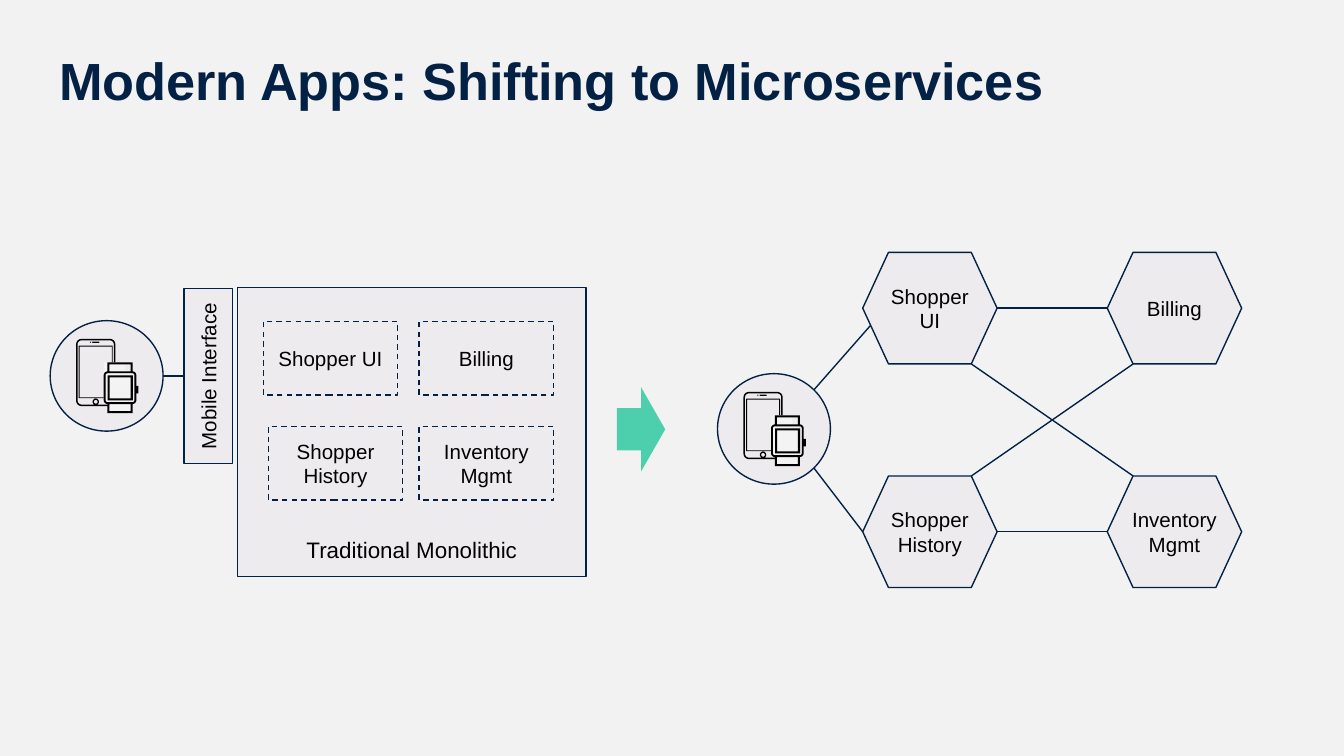
import math
from dataclasses import dataclass, field
from typing import Any, NamedTuple

from lxml import etree
from pptx import Presentation
from pptx.dml.color import RGBColor
from pptx.enum import dml, shapes as kinds, text
from pptx.oxml import ns
from pptx.util import Pt


@dataclass(frozen=True)
class Theme:
    font: str = "Arial"
    paper: RGBColor = RGBColor.from_string("F2F2F2")
    panel: RGBColor = RGBColor.from_string("EEEBEE")
    navy: RGBColor = RGBColor.from_string("022144")
    black: RGBColor = RGBColor.from_string("000000")
    mint: RGBColor = RGBColor.from_string("4DCFAD")
    strap: RGBColor = RGBColor.from_string("F3F3F3")
    title_size: float = 28
    caption_size: float = 12
    label_size: float = 11
    line_width: float = 0.75


THEME = Theme()
KIND = kinds.MSO_SHAPE


class Box(NamedTuple):
    left: float
    top: float
    width: float
    height: float

    def moved(self, x: float, y: float) -> "Box":
        return self._replace(left=self.left + x, top=self.top + y)

    def inset(self, gap: float) -> "Box":
        return Box(self.left + gap, self.top + gap,
                   self.width - 2 * gap, self.height - 2 * gap)


class Ring(NamedTuple):
    box: Box
    radius: float = 0


class Link(NamedTuple):
    x1: float
    y1: float
    x2: float
    y2: float


@dataclass(frozen=True)
class Block:
    label: str
    box: Box
    kind: Any = KIND.RECTANGLE
    fill: RGBColor = THEME.panel
    outlined: bool = True
    dashed: bool = False
    size: float = THEME.label_size
    margin: float = 7.2
    anchor: Any = text.MSO_ANCHOR.MIDDLE
    rotation: float = 0
    adjustments: list[float] = field(default_factory=list)


def set_values(target: Any, values: dict[str, Any]) -> None:
    for name, value in values.items():
        setattr(target, name, value)


def write(frame: Any, label: str, size: float, color: RGBColor, bold: bool,
          align: Any, anchor: Any, margin: float) -> None:
    sides = ("left", "top", "right", "bottom")
    set_values(frame, {f"margin_{side}": Pt(margin) for side in sides}
               | {"word_wrap": True, "vertical_anchor": anchor,
                  "auto_size": text.MSO_AUTO_SIZE.NONE, "text": label})
    for para in frame.paragraphs:
        para.alignment = align
        set_values(para.font, {"name": THEME.font, "size": Pt(size), "bold": bold})
        para.font.color.rgb = color


def draw_block(page: Any, block: Block) -> Any:
    shape = page.shapes.add_shape(block.kind, *map(Pt, block.box))
    shape.shadow.inherit = False
    shape.rotation = block.rotation
    for index, value in enumerate(block.adjustments):
        shape.adjustments[index] = value
    shape.fill.solid()
    shape.fill.fore_color.rgb = block.fill
    if block.outlined:
        shape.line.color.rgb = THEME.navy
        shape.line.width = Pt(THEME.line_width)
    else:
        shape.line.fill.background()
    if block.dashed:
        shape.line.dash_style = dml.MSO_LINE.DASH
    if block.label:
        write(shape.text_frame, block.label, block.size, THEME.black, False,
              text.PP_ALIGN.CENTER, block.anchor, block.margin)
    return shape


def draw_link(page: Any, link: Link) -> Any:
    line = page.shapes.add_connector(kinds.MSO_CONNECTOR.STRAIGHT, *map(Pt, link))
    line.line.color.rgb = THEME.navy
    line.line.width = Pt(THEME.line_width)
    etree.SubElement(line._element.spPr, ns.qn("a:effectLst"))
    return line


def ring_points(ring: Ring) -> list[tuple[int, int]]:
    """Trace a rectangle clockwise, with each corner rounded in 15 degree steps."""
    box, radius = ring
    inner = box.inset(radius)
    right, bottom = inner.left + inner.width, inner.top + inner.height
    corners = ((inner.left, inner.top), (right, inner.top),
               (right, bottom), (inner.left, bottom))
    return [(Pt(x + radius * math.cos(math.radians(angle))),
             Pt(y + radius * math.sin(math.radians(angle))))
            for quarter, (x, y) in enumerate(corners)
            for angle in range(180 + 90 * quarter, 271 + 90 * quarter,
                               15 if radius else 91)]


def draw_rings(page: Any, rings: list[Ring], x: float, y: float) -> Any:
    """Join rings in one outline, where a ring inside another is a hole."""
    traces = [ring_points(Ring(ring.box.moved(x, y), ring.radius)) for ring in rings]
    builder = page.shapes.build_freeform(*traces[0][0], 1.0)
    for index, trace in enumerate(traces):
        if index:
            builder.move_to(*trace[0])
        builder.add_line_segments(trace[1:], close=True)
    shape = builder.convert_to_shape()
    shape.shadow.inherit = False
    shape.fill.solid()
    shape.fill.fore_color.rgb = THEME.black
    shape.line.fill.background()
    return shape


def hollow(box: Box, radius: float, wall: float) -> list[Ring]:
    return [Ring(box, radius), Ring(box.inset(wall), max(radius - wall, 0))]


PHONE = [*hollow(Box(0, 0, 21, 36), 2.9, 0.8),
         *hollow(Box(1.4, 3.6, 18.2, 28.2), 0.3, 0.5),
         *hollow(Box(8.8, 32, 3.4, 3.4), 1.7, 0.7),
         Ring(Box(8.6, 1.5, 3.9, 0.6), 0.3), Ring(Box(7.4, 1.5, 0.6, 0.6), 0.3)]
WATCH_CASE = [*hollow(Box(0, 4.8, 17.5, 17.5), 2.1, 1),
              Ring(Box(2, 0, 13.5, 4.8)), Ring(Box(3.1, 1, 11.3, 3.8)),
              Ring(Box(2, 22.3, 13.5, 4.8)), Ring(Box(3.1, 22.3, 11.3, 3.8)),
              Ring(Box(17.5, 12.6, 1.1, 4))]
WATCH_FACE = hollow(Box(2.1, 6.9, 13.4, 13.4), 0, 1.1)
STRAPS = [Box(2.9, 4.8, 11.5, 21.6), Box(0, 0, 11.5, 21.6)]


def draw_devices(page: Any, circle: Box) -> None:
    """Draw a circle that holds a phone with a watch in front."""
    draw_block(page, Block("", circle, KIND.OVAL))
    x, y = circle.left + 13.9, circle.top + 9.8
    watch_x, watch_y = x + 14.8, y + 12.6
    parts = [draw_rings(page, PHONE, x, y)]
    parts += [draw_block(page, Block("", strap.moved(watch_x, watch_y),
                                     fill=THEME.strap, outlined=False))
              for strap in STRAPS]
    parts += [draw_rings(page, rings, watch_x, watch_y)
              for rings in (WATCH_CASE, WATCH_FACE)]
    page.shapes.add_group_shape(parts)


def draw_monolith(page: Any) -> None:
    draw_block(page, Block("Traditional Monolithic", Box(127.4, 154.1, 186.5, 154.8),
                           size=THEME.caption_size, anchor=text.MSO_ANCHOR.BOTTOM))
    for label, x, y in (("Shopper UI", 141.1, 172.1), ("Shopper History", 143.8, 228.4),
                        ("Billing", 224.6, 172.1), ("Inventory\nMgmt", 224.6, 228.4)):
        draw_block(page, Block(label, Box(x, y, 72, 39.6), dashed=True))
    draw_devices(page, Box(26.9, 171.8, 60.5, 59.2))
    interface = draw_block(page, Block("Mobile Interface", Box(64.8, 188.5, 93.6, 26),
                                       rotation=270))
    line = draw_link(page, Link(87.4, 201.5, 98.6, 201.5))
    line.end_connect(interface, 0)  # the top side faces left once turned
    set_values(line, {"end_x": Pt(98.6), "end_y": Pt(201.5)})


def draw_microservices(page: Any) -> None:
    west, east, north, south = 462.2, 593.2, 135.2, 255
    width, height, slant = 72, 59.8, 0.231
    corner = slant * height
    upper, lower = north + height / 2, south + height / 2
    inner_west, inner_east = west + width - corner, east + corner
    circle = Box(384.4, 200.2, 60.5, 59.2)
    rim = circle.left + circle.width * (1 + math.sqrt(0.5)) / 2
    rim_drop = circle.height * (1 - math.sqrt(0.5)) / 2

    def draw_service(label: str, x: float, y: float) -> None:
        draw_block(page, Block(label, Box(x, y, width, height), KIND.HEXAGON,
                               margin=0, adjustments=[slant]))

    draw_devices(page, circle)
    draw_service("Billing", east, north)
    draw_service("Shopper History", west, south)
    draw_service("Inventory\nMgmt", east, south)
    for link in (Link(509.8, upper, east, upper),
                 Link(west + width, lower, east, lower),
                 Link(inner_west, north + height, inner_east, south),
                 Link(inner_west, south, inner_east, north + height),
                 Link(474.5, upper, rim, circle.top + rim_drop),
                 Link(west, lower, rim, circle.top + circle.height - rim_drop)):
        draw_link(page, link)
    draw_service("Shopper UI", west, north)


def main() -> None:
    deck = Presentation()
    set_values(deck, {"slide_width": Pt(720), "slide_height": Pt(405)})
    page = deck.slides.add_slide(deck.slide_layouts[5])
    page.background.fill.solid()
    page.background.fill.fore_color.rgb = THEME.paper
    title = page.shapes.title
    set_values(title, {"left": Pt(24.5), "top": Pt(18.7),
                       "width": Pt(671), "height": Pt(45.4)})
    write(title.text_frame, "Modern Apps: Shifting to Microservices", THEME.title_size,
          THEME.navy, True, text.PP_ALIGN.LEFT, text.MSO_ANCHOR.TOP, 7.2)
    draw_monolith(page)
    draw_microservices(page)
    draw_block(page, Block("", Box(330.5, 207.4, 25.9, 45.2), KIND.RIGHT_ARROW,
                           THEME.mint, outlined=False, adjustments=[0.5, 0.5]))
    deck.save("out.pptx")


if __name__ == "__main__":
    main()
